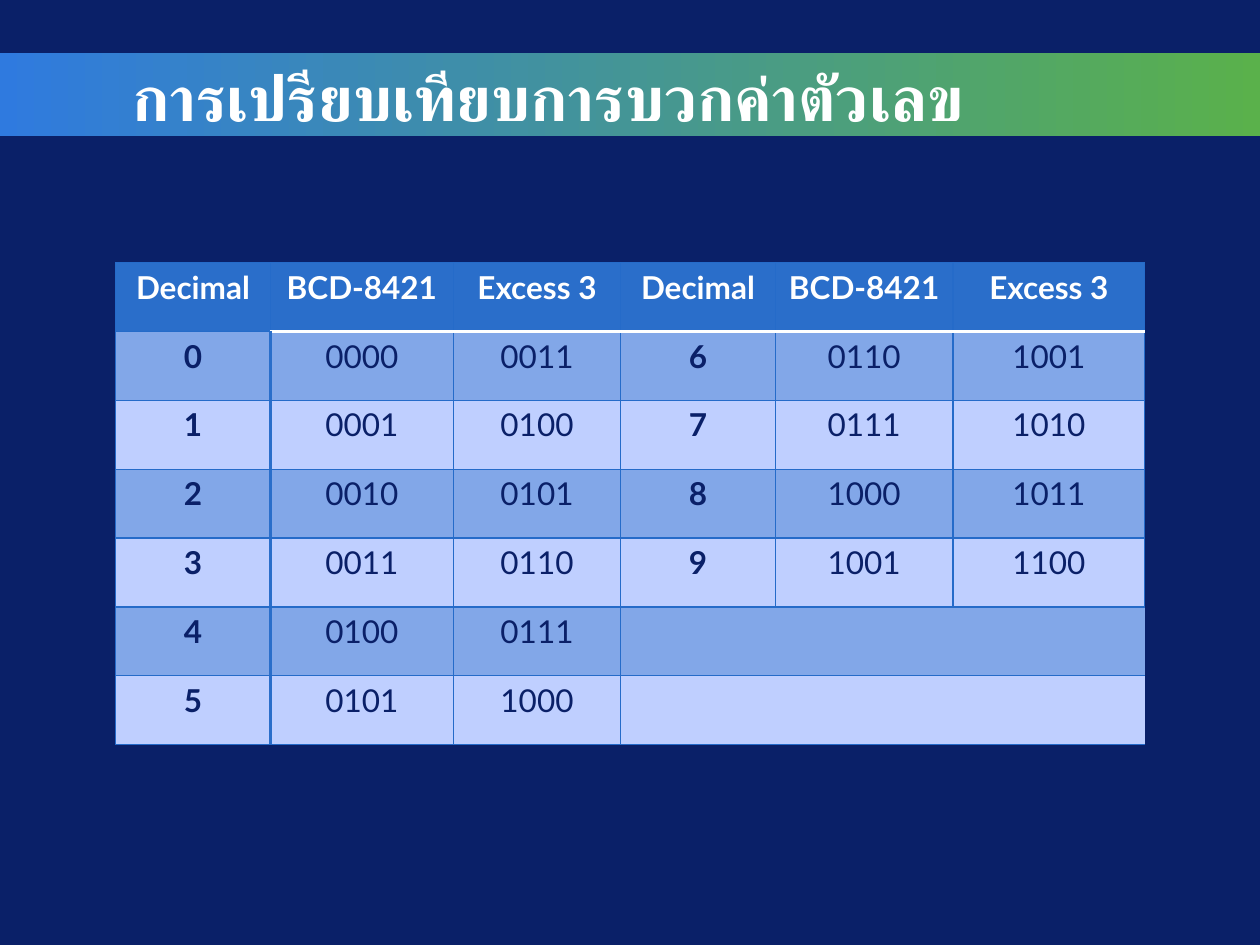
import pptx
import pptx.dml.color
import pptx.enum.shapes
import pptx.enum.text
import pptx.oxml.ns
import pptx.util
from dataclasses import dataclass
from lxml import etree

Cm, Pt = pptx.util.Cm, pptx.util.Pt
ALIGN = pptx.enum.text.PP_ALIGN


@dataclass(frozen=True)
class Theme:
    background: str = "0A2068"
    banner: tuple = ("2F7ADF", "5AB14B")
    light: str = "FFFFFF"
    dark: str = "0A2068"
    header: str = "2A6ECA"
    bands: tuple = ("82A7E8", "BFCFFF")
    grid: str = "256BC9"
    title_font: str = "Calibri"
    table_font: str = "Lato"
    title_size: int = 36
    table_size: int = 18
    thin: float = 0.75
    thick: float = 2


def rgb(value):
    return pptx.dml.color.RGBColor.from_string(value)


class SlideBuilder:
    def __init__(self, slide, theme):
        self.slide, self.theme = slide, theme
        slide.background.fill.solid()
        slide.background.fill.fore_color.rgb = rgb(theme.background)

    def banner(self, left, top, width, height):
        band = self.slide.shapes.add_shape(
            pptx.enum.shapes.MSO_SHAPE.RECTANGLE, left, top, width, height)
        band.shadow.inherit = False
        band.line.fill.background()
        band.fill.gradient()
        band.fill.gradient_angle = 0
        for stop, color in zip(band.fill.gradient_stops, self.theme.banner):
            stop.color.rgb = rgb(color)

    def add_text(self, paragraph, text, font, size, color, bold):
        run = paragraph.add_run()
        run.text = text
        run.font.name, run.font.size, run.font.bold = font, Pt(size), bold
        run.font.color.rgb = rgb(color)

    def title(self, text, left, top, width, height):
        frame = self.slide.shapes.add_textbox(left, top, width, height).text_frame
        frame.word_wrap = True
        frame.auto_size = pptx.enum.text.MSO_AUTO_SIZE.SHAPE_TO_FIT_TEXT
        paragraph = frame.paragraphs[0]
        paragraph.alignment = ALIGN.RIGHT
        self.add_text(paragraph, text, self.theme.title_font,
                      self.theme.title_size, self.theme.light, True)

    def borders(self, cell, edges):
        properties = cell._tc.get_or_add_tcPr()
        for index, (side, edge) in enumerate(zip("LRTB", edges)):
            line = etree.Element(pptx.oxml.ns.qn("a:ln" + side))
            properties.insert(index, line)
            if edge is None:
                etree.SubElement(line, pptx.oxml.ns.qn("a:noFill"))
                continue
            color, width = edge
            line.set("w", str(int(Pt(width))))
            fill = etree.SubElement(line, pptx.oxml.ns.qn("a:solidFill"))
            etree.SubElement(fill, pptx.oxml.ns.qn("a:srgbClr"), val=color)

    def table(self, rows, widths, left, top, row_height, bold_columns):
        theme = self.theme
        count = len(widths)
        table = self.slide.shapes.add_table(
            len(rows), count, left, top, sum(widths), row_height * len(rows)).table
        table.first_row = table.horz_banding = False
        for column, width in zip(table.columns, widths):
            column.width = width

        def vertical_edge(r, c):
            if len(rows[r]) < c < count:
                return None  # inside a merged cell
            if r > 0 and c == 1:
                return theme.header, theme.thick
            return theme.grid, theme.thin

        def horizontal_edge(r, c):
            if r == 1 and c > 0:
                return theme.light, theme.thick
            return theme.grid, theme.thin

        for r, values in enumerate(rows):
            table.rows[r].height = row_height
            for c in range(count):
                cell = table.cell(r, c)
                cell.fill.solid()
                cell.fill.fore_color.rgb = rgb(
                    theme.bands[(r - 1) % 2] if r else theme.header)
                self.borders(cell, (vertical_edge(r, c), vertical_edge(r, c + 1),
                                    horizontal_edge(r, c), horizontal_edge(r + 1, c)))
                if c >= len(values):
                    continue
                cell.margin_left = cell.margin_right = Cm(0.18)
                cell.margin_top = cell.margin_bottom = 0
                paragraph = cell.text_frame.paragraphs[0]
                paragraph.alignment = ALIGN.CENTER
                paragraph.line_spacing = 1.15
                self.add_text(paragraph, values[c], theme.table_font, theme.table_size,
                              theme.dark if r else theme.light,
                              r == 0 or c in bold_columns)
            if len(values) < count:
                table.cell(r, len(values)).merge(table.cell(r, count - 1))


def code_rows():
    """Digits 0-5 on the left and 6-9 on the right, with both codes."""
    def entry(digit):
        return [str(digit), f"{digit:04b}", f"{digit + 3:04b}"]

    rows = [["Decimal", "BCD-8421", "Excess 3"] * 2]
    for digit in range(6):
        rows.append(entry(digit) + (entry(digit + 6) if digit + 6 < 10 else []))
    return rows


def main():
    deck = pptx.Presentation()
    deck.slide_width, deck.slide_height = Cm(25.4), Cm(19.05)
    builder = SlideBuilder(deck.slides.add_slide(deck.slide_layouts[6]), Theme())

    # Title band
    builder.banner(0, Cm(1.06), deck.slide_width, Cm(1.69))

    # Code comparison table
    widths = [Cm(w) for w in (3.12, 3.69, 3.37, 3.12, 3.58, 3.87)]
    builder.table(code_rows(), widths, Cm(2.33), Cm(5.29), Cm(1.39), (0, 3))

    # Title
    builder.title("การเปรียบเทียบการบวกค่าตัวเลข",
                  Cm(1.7), Cm(1.06), Cm(17.98), Cm(1.8))

    deck.save("out.pptx")


if __name__ == "__main__":
    main()
